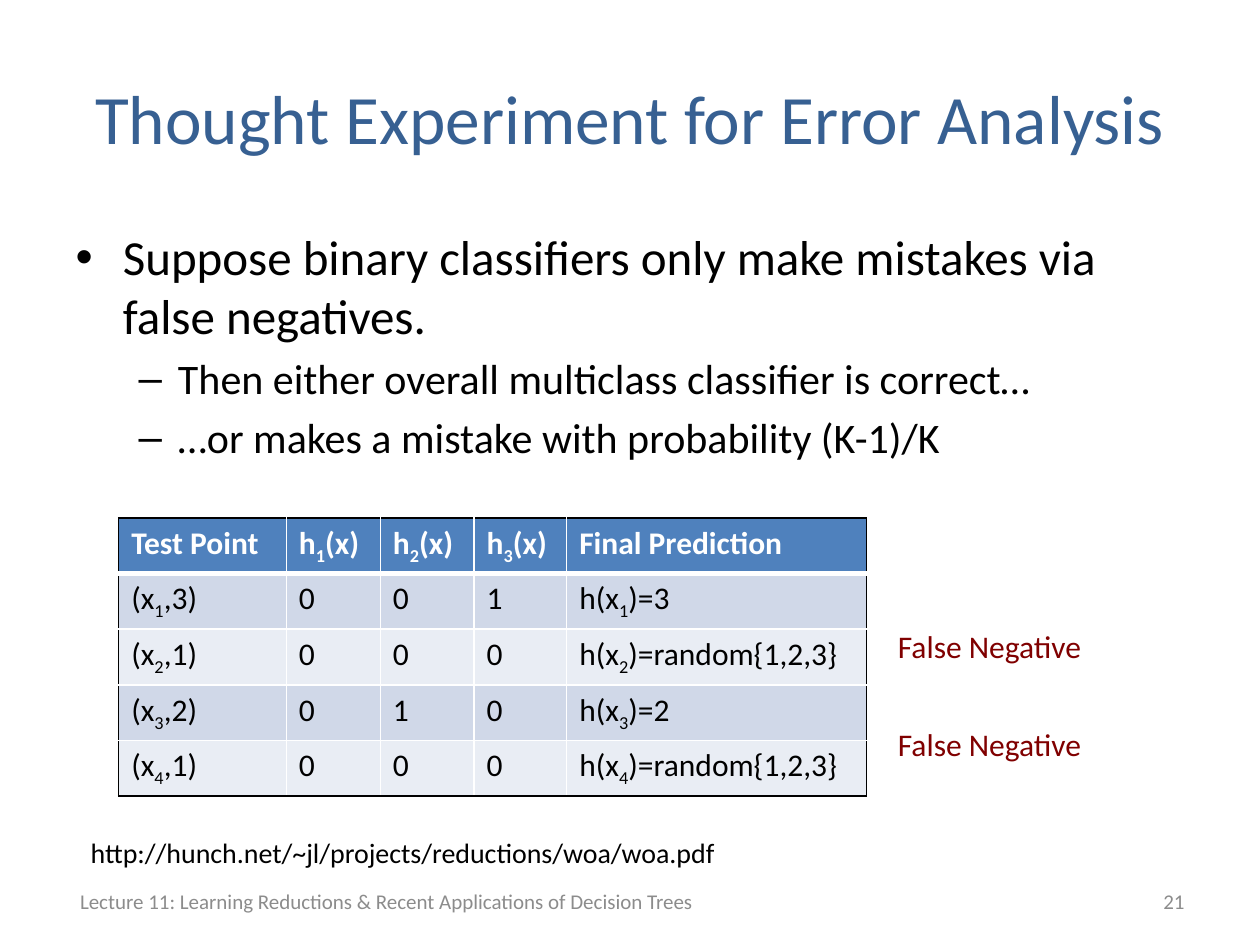
import pptx
import pptx.util
import pptx.oxml
import pptx.oxml.ns
import pptx.dml.color
import pptx.enum.text
from pptx.util import Pt

RGBColor = pptx.dml.color.RGBColor
PP_ALIGN = pptx.enum.text.PP_ALIGN
MSO_ANCHOR = pptx.enum.text.MSO_ANCHOR
MSO_AUTO_SIZE = pptx.enum.text.MSO_AUTO_SIZE

FONT = "Calibri"
TITLE_BLUE = RGBColor(0x37, 0x60, 0x92)
HEADER_BLUE = RGBColor(0x4F, 0x81, 0xBD)
BAND_DARK = RGBColor(0xD0, 0xD8, 0xE8)
BAND_LIGHT = RGBColor(0xE9, 0xED, 0xF4)
DARK_RED = RGBColor(0x80, 0x00, 0x00)
GREY = RGBColor(0x8C, 0x8C, 0x8C)
BLACK = RGBColor(0, 0, 0)
WHITE = RGBColor(0xFF, 0xFF, 0xFF)


def format_font(font, size, color, bold=False):
    font.name = FONT
    font.size = Pt(size)
    font.bold = bold
    font.color.rgb = color


def add_border(cell, side, color, width):
    ns = pptx.oxml.ns.nsdecls("a")
    cell._tc.get_or_add_tcPr().append(pptx.oxml.parse_xml(
        f'<a:ln{side} {ns} w="{Pt(width)}"><a:solidFill>'
        f'<a:srgbClr val="{color}"/></a:solidFill></a:ln{side}>'))


prs = pptx.Presentation()
prs.slide_width, prs.slide_height = Pt(720), Pt(540)
s = prs.slides.add_slide(prs.slide_layouts[1])

title = s.shapes.title
title.left, title.top, title.width, title.height = Pt(36), Pt(21.6), Pt(648), Pt(90)
tf = title.text_frame
tf.text = "Thought Experiment for Error Analysis"
tf.auto_size = MSO_AUTO_SIZE.NONE
tf.vertical_anchor = MSO_ANCHOR.MIDDLE
p = tf.paragraphs[0]
p.alignment = PP_ALIGN.CENTER
format_font(p.runs[0].font, 39.6, TITLE_BLUE)

body = s.placeholders[1]
body.left, body.top, body.width, body.height = Pt(36), Pt(126), Pt(648), Pt(356.4)
tf = body.text_frame
tf.auto_size = MSO_AUTO_SIZE.NONE
bullets = [
    (0, 28, "Suppose binary classifiers only make mistakes via false negatives."),
    (1, 24, "Then either overall multiclass classifier is correct…"),
    (1, 24, "…or makes a mistake with probability (K-1)/K"),
]
for i, (level, size, text) in enumerate(bullets):
    p = tf.paragraphs[0] if i == 0 else tf.add_paragraph()
    p.text = text
    p.level = level
    format_font(p.runs[0].font, size, BLACK)
tf.paragraphs[0].space_before = Pt(0)

labels = [
    ("Lecture 11: Learning Reductions & Recent Applications of Decision Trees",
     36, 500.5, 370, 28.8, 12, GREY, PP_ALIGN.CENTER, MSO_ANCHOR.MIDDLE, True),
    ("21", 516, 500.5, 168, 28.8, 12, GREY, PP_ALIGN.RIGHT, MSO_ANCHOR.MIDDLE, True),
    ("http://hunch.net/~jl/projects/reductions/woa/woa.pdf",
     44.8, 473.8, 377, 26.7, 16, BLACK, PP_ALIGN.LEFT, MSO_ANCHOR.TOP, False),
    ("False Negative", 506, 355, 121.7, 29, 18, DARK_RED,
     PP_ALIGN.LEFT, MSO_ANCHOR.TOP, False),
    ("False Negative", 506, 410.5, 121.7, 29, 18, DARK_RED,
     PP_ALIGN.LEFT, MSO_ANCHOR.TOP, False),
]
for text, left, top, width, height, size, color, align, anchor, wrap in labels:
    sp = s.shapes.add_textbox(Pt(left), Pt(top), Pt(width), Pt(height))
    tf = sp.text_frame
    tf.text = text
    tf.word_wrap = wrap
    tf.vertical_anchor = anchor
    p = tf.paragraphs[0]
    p.alignment = align
    format_font(p.runs[0].font, size, color)

rows = [
    ["Test Point", "h_1(x)", "h_2(x)", "h_3(x)", "Final Prediction"],
    ["(x_1,3)", "0", "0", "1", "h(x_1)=3"],
    ["(x_2,1)", "0", "0", "0", "h(x_2)=random{1,2,3}"],
    ["(x_3,2)", "0", "1", "0", "h(x_3)=2"],
    ["(x_4,1)", "0", "0", "0", "h(x_4)=random{1,2,3}"],
]
widths = [95.8, 53.8, 53.5, 53, 171.2]
row_height = 29.2
last_row, last_col = len(rows) - 1, len(widths) - 1
table = s.shapes.add_table(len(rows), len(widths), Pt(67.8), Pt(296),
                           Pt(sum(widths)), Pt(row_height * len(rows))).table
for column, width in zip(table.columns, widths):
    column.width = Pt(width)

for i, row in enumerate(rows):
    table.rows[i].height = Pt(row_height)
    header = i == 0
    for j, text in enumerate(row):
        cell = table.cell(i, j)
        add_border(cell, "L", BLACK if j == 0 else WHITE, 1)
        add_border(cell, "R", BLACK if j == last_col else WHITE, 1)
        add_border(cell, "T", BLACK if header else WHITE, 3 if i == 1 else 1)
        add_border(cell, "B", BLACK if i == last_row else WHITE, 3 if header else 1)
        cell.fill.solid()
        cell.fill.fore_color.rgb = HEADER_BLUE if header else BAND_DARK if i % 2 else BAND_LIGHT
        p = cell.text_frame.paragraphs[0]
        before, mark, after = text.partition("_")
        for part, baseline in ((before, 0), (after[:1], -25000), (after[1:], 0)):
            if part:
                r = p.add_run()
                r.text = part
                format_font(r.font, 18, WHITE if header else BLACK, header)
                if baseline:
                    r.font._element.set("baseline", str(baseline))

prs.save("out.pptx")
